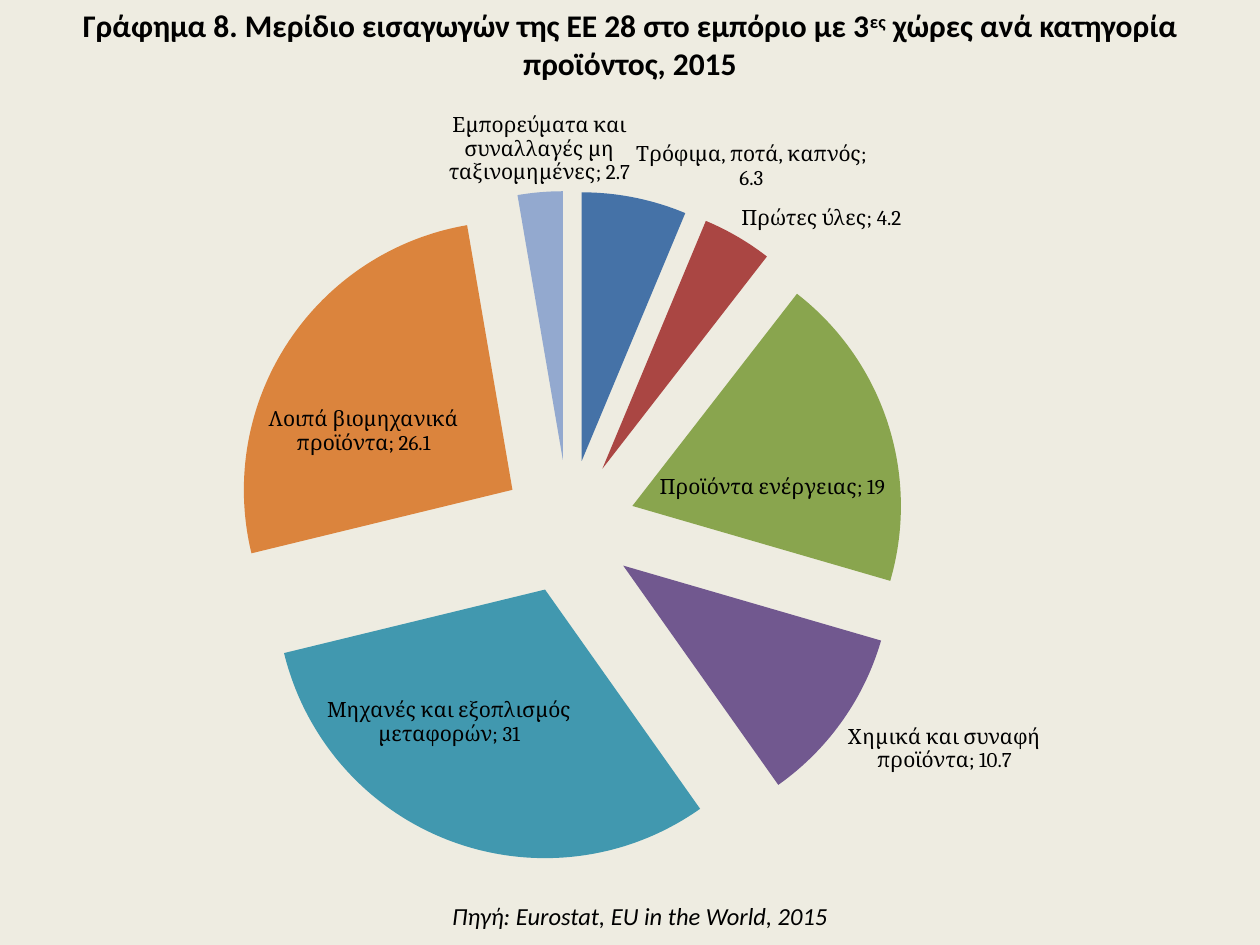
from lxml import etree
from pptx import Presentation
from pptx.chart.data import CategoryChartData
from pptx.dml.color import RGBColor
from pptx.enum.chart import XL_CHART_TYPE, XL_LABEL_POSITION
from pptx.enum.text import MSO_ANCHOR, MSO_AUTO_SIZE, PP_ALIGN
from pptx.oxml import parse_xml
from pptx.oxml.ns import qn
from pptx.util import Cm, Pt

PIE = XL_CHART_TYPE.PIE
CENTER_LABEL = XL_LABEL_POSITION.CENTER
OUTSIDE_LABEL = XL_LABEL_POSITION.OUTSIDE_END
TOP = MSO_ANCHOR.TOP
FIT_SHAPE = MSO_AUTO_SIZE.SHAPE_TO_FIT_TEXT
CENTERED = PP_ALIGN.CENTER
CHART_NS = "http://schemas.openxmlformats.org/drawingml/2006/chart"


def color(hex_value):
    return RGBColor.from_string(hex_value)


def manual_layout(**values):
    items = "".join(f'<c:{name} val="{value}"/>' for name, value in values.items())
    return parse_xml(
        f'<c:layout xmlns:c="{CHART_NS}"><c:manualLayout>{items}</c:manualLayout></c:layout>'
    )


presentation = Presentation()
presentation.slide_width = Cm(25.4)
presentation.slide_height = Cm(19.05)
slide = presentation.slides.add_slide(presentation.slide_layouts[5])
slide.background.fill.solid()
slide.background.fill.fore_color.rgb = color("EEECE1")

title = slide.shapes.title
title.left, title.top, title.width, title.height = Cm(0), Cm(0), Cm(25.4), Cm(2.57)
title.text_frame.vertical_anchor = TOP
title.text_frame.auto_size = FIT_SHAPE
paragraph = title.text_frame.paragraphs[0]
paragraph.alignment = CENTERED
title_runs = [
    ("Γράφημα 8. Μερίδιο εισαγωγών της ΕΕ 28 στο εμπόριο με 3", 0),
    ("ες", 30000),
    (" χώρες ανά κατηγορία προϊόντος, 2015", 0),
]
for text, baseline in title_runs:
    run = paragraph.add_run()
    run.text = text
    run.font.name = "Calibri"
    run.font.size = Pt(18)
    run.font.bold = True
    run.font.color.rgb = color("000000")
    if baseline:
        run._r.get_or_add_rPr().set("baseline", str(baseline))

shares = [
    ("Τρόφιμα, ποτά, καπνός", 6.3, "4572A7"),
    ("Πρώτες ύλες", 4.2, "AA4643"),
    ("Προϊόντα ενέργειας", 19, "89A54E"),
    ("Χημικά και συναφή προϊόντα", 10.7, "71588F"),
    ("Μηχανές και εξοπλισμός μεταφορών", 31, "4198AF"),
    ("Λοιπά βιομηχανικά προϊόντα", 26.1, "DB843D"),
    ("Εμπορεύματα και συναλλαγές μη ταξινομημένες", 2.7, "93A9CF"),
]
chart_data = CategoryChartData()
chart_data.categories = [category for category, _, _ in shares]
chart_data.add_series("Series 1", [share for _, share, _ in shares])
chart = slide.shapes.add_chart(
    PIE, Cm(0.51), Cm(1.93), Cm(24.61), Cm(15.8), chart_data
).chart
chart.has_title = False
chart.has_legend = False
chart.font.name = "Calibri"
chart.font.size = Pt(10)
chart.font.color.rgb = color("000000")

plot = chart.plots[0]
plot.vary_by_categories = True
plot_area = chart._chartSpace.chart.plotArea
for layout in plot_area.findall(qn("c:layout")):
    plot_area.remove(layout)
plot_area.insert(0, manual_layout(
    layoutTarget="inner", xMode="edge", yMode="edge", x=0.17, y=0.12, w=0.55, h=0.86
))

series = plot.series[0]
explosion = etree.Element(qn("c:explosion"), val="25")
series._element.find(qn("c:tx")).addnext(explosion)
for index, (_, _, fill) in enumerate(shares):
    point = series.points[index]
    point.format.fill.solid()
    point.format.fill.fore_color.rgb = color(fill)
    point.format.line.fill.background()

labels = series.data_labels
labels.show_value = True
labels.show_category_name = True
labels.show_percentage = False
labels.show_legend_key = False
labels.position = OUTSIDE_LABEL

inside_offsets = {2: (0.01, 0.03), 4: (-0.04, 0.01), 5: (-0.03, 0.02)}
for index, (x, y) in inside_offsets.items():
    label = series.points[index].data_label
    label.position = CENTER_LABEL
    label.font.name = "Cambria"
    label.font.size = Pt(12)
    label.font.color.rgb = color("000000")
    label_element = labels._element.findall(qn("c:dLbl"))[-1]
    label_element.insert(1, manual_layout(x=x, y=y))
    label_element.find(qn("c:showCatName")).set("val", "1")

labels.font.name = "Cambria"
labels.font.size = Pt(12)
labels.font.color.rgb = color("000000")
for element in [labels._element, *labels._element.findall(qn("c:dLbl"))]:
    separator = etree.Element(qn("c:separator"))
    separator.text = "; "
    last_flag = element.find(qn("c:showBubbleSize"))
    if last_flag is None:
        last_flag = element.find(qn("c:showPercent"))
    last_flag.addnext(separator)

source = slide.shapes.add_textbox(Cm(3.71), Cm(18.03), Cm(18.39), Cm(0.86))
source.text_frame.word_wrap = True
source.text_frame.auto_size = FIT_SHAPE
paragraph = source.text_frame.paragraphs[0]
paragraph.alignment = CENTERED
run = paragraph.add_run()
run.text = "Πηγή: Eurostat, EU in the World, 2015"
run.font.name = "Calibri"
run.font.size = Pt(14)
run.font.italic = True
run.font.color.rgb = color("000000")

presentation.save("out.pptx")
